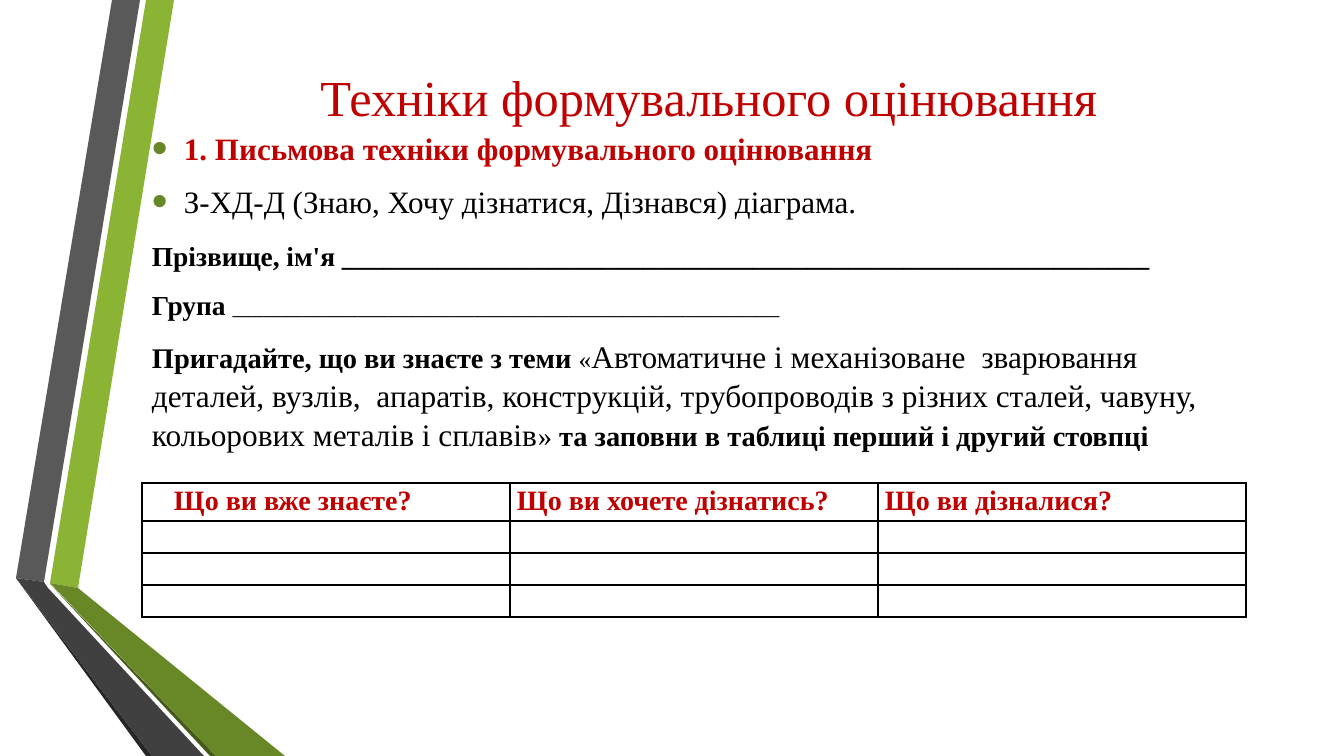
from dataclasses import dataclass
from lxml import etree
from pptx import Presentation, util as u
from pptx.dml.color import RGBColor
from pptx.enum import text as t
from pptx.oxml import ns

SIZE = 1344, 756
EMU = 12192000 / 1344


@dataclass(frozen=True)
class Theme:
    font: str = "Times New Roman"
    red: str = "C00000"
    ink: str = "000000"
    dot: str = "688727"
    title: float = 36
    lead: float = 22.2
    form: float = 19.6
    topic: float = 22.4
    task: float = 20.3
    quote: float = 18.2
    rule: float = 11.2
    head: float = 20


THEME = Theme()

# Ribbon pieces: colour and corner points
RIBBON = [
    ("8BB434", [(50, 583), (78, 588), (174, 0), (146, 0)]),
    ("595959", [(140, 0), (112, 0), (16, 578), (44, 582)]),
    ("262626", [(16, 578), (146, 756), (152, 756)]),
    ("465A1A", [(50, 584), (210, 756), (216, 756)]),
    ("688727", [(50, 583), (216, 756), (285, 756), (78, 588)]),
    ("404040", [(204, 756), (48, 588), (44, 582), (16, 578), (152, 756)]),
]

# A run is (text, size, colour, bold)
TITLE = [[("Техніки формувального оцінювання", THEME.title, THEME.red, False)]]
POINTS = [
    [("1. Письмова техніки формувального оцінювання", THEME.lead, THEME.red, True)],
    [("З-ХД-Д (Знаю, Хочу дізнатися, Дізнався) діаграма.", THEME.lead, THEME.ink, False)],
]
FORM = [
    [("Прізвище, ім'я " + "_" * 59, THEME.form, THEME.ink, True)],
    [("Група ", THEME.form, THEME.ink, True), ("_" * 70, THEME.rule, THEME.ink, True)],
    [
        ("Пригадайте, що ви знаєте з теми ", THEME.task, THEME.ink, True),
        ("«", THEME.quote, THEME.ink, False),
        ("Автоматичне і механізоване  зварювання деталей, вузлів,  апаратів, "
         "конструкцій, трубопроводів з різних сталей, чавуну, кольорових "
         "металів і сплавів", THEME.topic, THEME.ink, False),
        ("» ", THEME.task, THEME.ink, False),
        ("та заповни в таблиці перший і другий стовпці", THEME.task, THEME.ink, True),
    ],
]
HEADS = ["Що ви вже знаєте?", "Що ви хочете дізнатись?", "Що ви дізналися?"]
ROWS = [38, 32, 32, 32]
COL = 368
INDENT = 25


def px(n):
    return u.Emu(round(n * EMU))


def style(font, size, color, bold):
    font.name, font.size, font.bold = THEME.font, u.Pt(size), bold
    font.color.rgb = RGBColor.from_string(color)


def node(parent, tag, **attrs):
    return etree.SubElement(parent, ns.qn(tag), **attrs)


def bullet(para):
    """Add a hanging round bullet."""
    props = para._p.get_or_add_pPr()
    props.set("marL", str(px(32)))
    props.set("indent", str(-px(32)))
    node(node(props, "a:buClr"), "a:srgbClr", val=THEME.dot)
    node(props, "a:buSzPct", val="145000")
    node(props, "a:buFont", typeface="Arial")
    node(props, "a:buChar", char="•")


def write(slide, box, paras, gap=0, lines=1.0, align=t.PP_ALIGN.LEFT, dots=False):
    frame = slide.shapes.add_textbox(*map(px, box)).text_frame
    frame.word_wrap = True
    frame.margin_left = frame.margin_right = frame.margin_top = frame.margin_bottom = 0
    for i, runs in enumerate(paras):
        para = frame.add_paragraph() if i else frame.paragraphs[0]
        para.alignment, para.line_spacing = align, lines
        para.space_before = u.Pt(gap if i else 0)
        if dots:
            bullet(para)
        for words, *look in runs:
            run = para.add_run()
            run.text = words
            style(run.font, *look)


def ribbon(slide):
    for color, points in RIBBON:
        path = slide.shapes.build_freeform(*points[0], scale=EMU)
        path.add_line_segments(points[1:], close=True)
        shape = path.convert_to_shape()
        shape.shadow.inherit = False
        shape.fill.solid()
        shape.fill.fore_color.rgb = RGBColor.from_string(color)
        shape.line.fill.background()


def border(cell):
    props = cell._tc.get_or_add_tcPr()
    for i, side in enumerate("LRTB"):
        line = node(props, "a:ln" + side, w=str(u.Pt(1)))
        node(node(line, "a:solidFill"), "a:srgbClr", val=THEME.ink)
        props.insert(i, line)


def chart(slide):
    """Draw the know / want / learned table."""
    box = map(px, (142, 483, COL * len(HEADS), sum(ROWS)))
    table = slide.shapes.add_table(len(ROWS), len(HEADS), *box).table
    table.first_row = table.horz_banding = False
    for col in table.columns:
        col.width = px(COL)
    for row, high in zip(table.rows, ROWS):
        row.height = px(high)
    for cell in table.iter_cells():
        cell.margin_left = cell.margin_right = px(7)
        cell.margin_top = cell.margin_bottom = 0
        cell.fill.background()
        border(cell)
        cell.text_frame.paragraphs[0].font.size = u.Pt(THEME.rule)
    for i, words in enumerate(HEADS):
        para = table.cell(0, i).text_frame.paragraphs[0]
        para.text = words
        para.alignment, para.line_spacing = t.PP_ALIGN.JUSTIFY, 1.07
        if i == 0:
            para._p.get_or_add_pPr().set("marL", str(px(INDENT)))
        style(para.runs[0].font, THEME.head, THEME.red, True)


def main():
    deck = Presentation()
    deck.slide_width, deck.slide_height = map(px, SIZE)
    slide = deck.slides.add_slide(deck.slide_layouts[6])
    ribbon(slide)
    write(slide, (173, 66, 1072, 58), TITLE, align=t.PP_ALIGN.CENTER)
    write(slide, (152, 129, 1085, 90), POINTS, gap=11.5, dots=True)
    chart(slide)
    write(slide, (152, 238, 1085, 212), FORM, gap=10.5, lines=1.04)
    deck.save("out.pptx")


if __name__ == "__main__":
    main()
